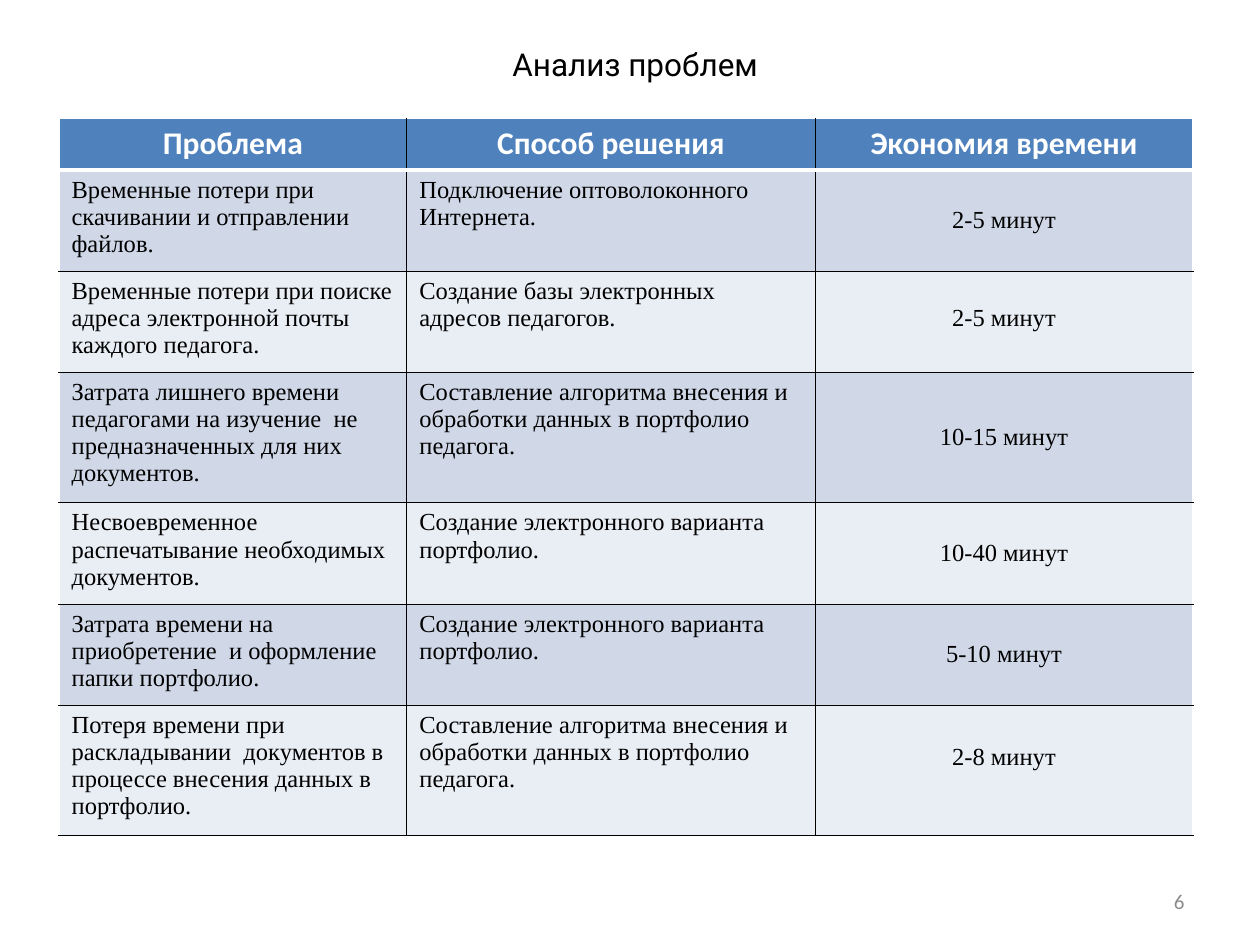
from pptx import Presentation
from pptx import util as u
from pptx.dml.color import RGBColor
from pptx.enum import text as t
from pptx.oxml.xmlchemy import OxmlElement

BLACK = RGBColor(0x00, 0x00, 0x00)
WHITE = RGBColor(0xFF, 0xFF, 0xFF)
GREY = RGBColor(0x8C, 0x8C, 0x8C)
BLUE = RGBColor(0x4F, 0x81, 0xBD)
BANDS = (RGBColor(0xD0, 0xD8, 0xE8), RGBColor(0xE9, 0xED, 0xF4))

THIN, EDGE, RULE = (BLACK, 0.5), (WHITE, 1), (WHITE, 3)
COLS = (7.01, 8.23, 7.62)
HEAD = ("Проблема", "Способ решения", "Экономия времени")
HEAD_H = 1.04
# Each entry: problem, solution, saving, row height, lift of the saving.
ROWS = (
    ("Временные потери при скачивании и отправлении файлов.",
     "Подключение оптоволоконного Интернета.", "2-5 минут", 2.04, 0),
    ("Временные потери при поиске адреса электронной почты каждого педагога.",
     "Создание базы электронных адресов педагогов.", "2-5 минут", 2.04, 0.13),
    ("Затрата лишнего времени педагогами на изучение  не предназначенных для них документов.",
     "Составление алгоритма внесения и обработки данных в портфолио педагога.",
     "10-15 минут", 2.62, 0),
    ("Несвоевременное распечатывание необходимых документов.",
     "Создание электронного варианта  портфолио.", "10-40 минут", 2.04, 0),
    ("Затрата времени на приобретение  и оформление папки портфолио.",
     "Создание электронного варианта  портфолио.", "5-10 минут", 2.04, 0),
    ("Потеря времени при раскладывании  документов в процессе внесения данных в портфолио.",
     "Составление алгоритма внесения и обработки данных в портфолио педагога.",
     "2-8 минут", 2.62, 0.53),
)


def write(frame, words, face, size, color, align, bold=False):
    """Add one formatted run to the first paragraph of a text frame."""
    para = frame.paragraphs[0]
    para.alignment = align
    run = para.add_run()
    run.text = words
    font = run.font
    font.name, font.size, font.bold = face, u.Pt(size), bold
    font.color.rgb = color


def place(shape, box):
    """Move a shape to a box given in centimetres."""
    shape.left, shape.top, shape.width, shape.height = map(u.Cm, box)


def border(cell, **sides):
    """Draw the cell borders, each given as a colour and a width."""
    props = cell._tc.get_or_add_tcPr()
    for side in "LRTB":
        color, width = sides[side]
        line = OxmlElement(f"a:ln{side}")
        line.set("w", str(u.Pt(width)))
        fill, tint = OxmlElement("a:solidFill"), OxmlElement("a:srgbClr")
        tint.set("val", str(color))
        fill.append(tint)
        line.append(fill)
        props.append(line)


def paint(cell, row, col):
    """Give a cell the borders and fill that its place calls for."""
    border(cell,
           L=THIN if col else EDGE,
           R=THIN if col < len(COLS) - 1 else EDGE,
           T=EDGE if row == 0 else RULE if row == 1 else THIN,
           B=THIN if row else RULE)
    cell.fill.solid()
    cell.fill.fore_color.rgb = BANDS[(row - 1) % 2] if row else BLUE


def add_title(slide, box):
    """Place the slide title in its box."""
    title = slide.shapes.title
    place(title, box)
    frame = title.text_frame
    frame.word_wrap = True
    frame.auto_size = t.MSO_AUTO_SIZE.SHAPE_TO_FIT_TEXT
    frame.vertical_anchor = t.MSO_ANCHOR.TOP
    write(frame, "Анализ проблем", "Roboto", 18, BLACK, t.PP_ALIGN.CENTER)


def add_grid(slide, left, top):
    """Build the table of problems from its top left corner."""
    highs = [HEAD_H] + [row[3] for row in ROWS]
    grid = slide.shapes.add_table(len(highs), len(COLS), u.Cm(left), u.Cm(top),
                                  u.Cm(sum(COLS)), u.Cm(sum(highs))).table
    grid.horz_banding = False
    for col, wide in zip(grid.columns, COLS):
        col.width = u.Cm(wide)
    for row, high in zip(grid.rows, highs):
        row.height = u.Cm(high)
    for col, words in enumerate(HEAD):
        cell = grid.cell(0, col)
        paint(cell, 0, col)
        write(cell.text_frame, words, "Calibri", 18, WHITE, t.PP_ALIGN.CENTER, True)
    for row, (*texts, _, lift) in enumerate(ROWS, 1):
        for col, words in enumerate(texts):
            cell = grid.cell(row, col)
            paint(cell, row, col)
            last = col == len(COLS) - 1
            if last:
                cell.vertical_anchor = t.MSO_ANCHOR.MIDDLE
                cell.margin_bottom = u.Cm(0.13 + lift)
            write(cell.text_frame, words, "Times New Roman", 14, BLACK,
                  t.PP_ALIGN.CENTER if last else t.PP_ALIGN.LEFT)


def add_number(slide, box):
    """Place the page number in its box."""
    frame = slide.shapes.add_textbox(*map(u.Cm, box)).text_frame
    frame.word_wrap = True
    frame.vertical_anchor = t.MSO_ANCHOR.MIDDLE
    write(frame, "6", "Calibri", 12, GREY, t.PP_ALIGN.RIGHT)


def main():
    """Build the slide and save it."""
    deck = Presentation()
    deck.slide_width, deck.slide_height = u.Cm(25.4), u.Cm(19.05)
    slide = deck.slides.add_slide(deck.slide_layouts[5])
    add_title(slide, (1.4, 0.79, 22.81, 1.02))
    add_grid(slide, 1.19, 2.39)
    add_number(slide, (18.2, 17.65, 5.93, 1.02))
    deck.save("out.pptx")


if __name__ == "__main__":
    main()
